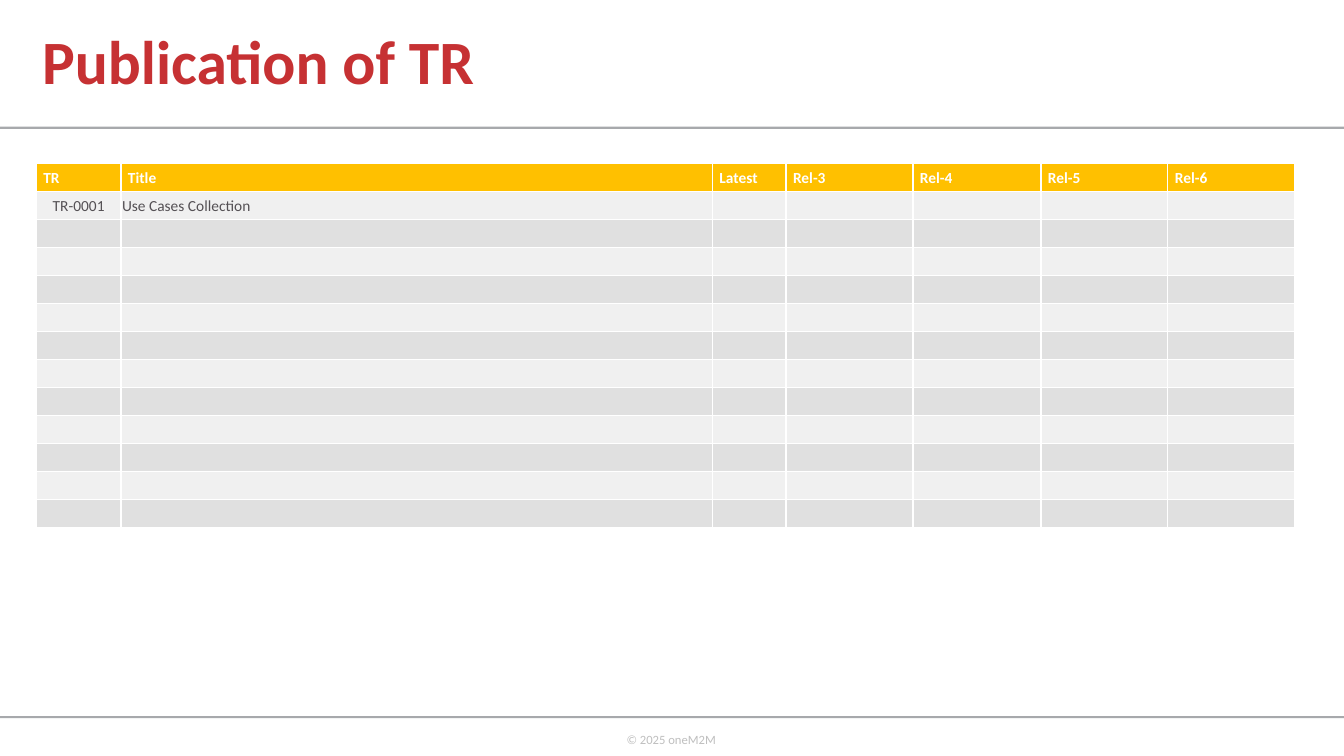
from lxml.etree import SubElement
from pptx import Presentation
from pptx.dml.color import RGBColor
from pptx.enum.shapes import MSO_SHAPE
from pptx.enum.text import MSO_ANCHOR, PP_ALIGN
from pptx.oxml.ns import qn
from pptx.util import Pt

PAGE_WIDTH, PAGE_HEIGHT = 960, 540
HEADERS = ["TR", "Title", "Latest", "Rel-3", "Rel-4", "Rel-5", "Rel-6"]
ENTRIES = [["TR-0001", "Use Cases Collection"]]
COLUMN_SHARES = [0.84, 5.87, 0.73, 1.26, 1.27, 1.26, 1.26]
BODY_ROWS = 12
FRAME_MARGINS = dict.fromkeys(["margin_left", "margin_top", "margin_right", "margin_bottom"], Pt(3.6))
HEADER_CELL = {"margin_left": Pt(5), "margin_right": Pt(5), "margin_top": 0, "margin_bottom": 0,
               "vertical_anchor": MSO_ANCHOR.MIDDLE}
BODY_CELL = {**HEADER_CELL, "margin_left": Pt(0.75), "margin_right": Pt(0.75), "margin_top": Pt(0.75)}


def color(value):
    return RGBColor.from_string(value)


def apply_format(target, values):
    for name, value in values.items():
        setattr(target, name, value)


def write(para, text, size, fill, bold=False):
    span = para.add_run()
    span.text = text
    apply_format(span.font, {"name": "Calibri", "size": Pt(size), "bold": bold})
    span.font.color.rgb = color(fill)


def add_rule(page, left, top, width):
    rule = page.shapes.add_shape(MSO_SHAPE.RECTANGLE, Pt(left), Pt(top), Pt(width), Pt(1.5))
    rule.shadow.inherit = False
    rule.fill.solid()
    rule.fill.fore_color.rgb = color("A7A9AC")
    rule.line.fill.background()


def add_heading(page, left, top, width, height):
    add_rule(page, 0, top + height - 1.5, PAGE_WIDTH)
    title = page.shapes.title
    apply_format(title, {"left": Pt(left), "top": Pt(top), "width": Pt(width), "height": Pt(height)})
    frame = title.text_frame
    apply_format(frame, {**FRAME_MARGINS, "word_wrap": True, "vertical_anchor": MSO_ANCHOR.MIDDLE})
    para = frame.paragraphs[0]
    apply_format(para, {"alignment": PP_ALIGN.LEFT, "line_spacing": 0.9})
    write(para, "Publication of TR", 44, "C63133", True)


def add_footer(page, left, top, width, height):
    add_rule(page, left, top, width)
    label_width = 74
    box = page.shapes.add_textbox(Pt(left + (width - label_width) / 2 + 1), Pt(top + 7.5),
                                  Pt(label_width), Pt(height - 10))
    apply_format(box.text_frame, {**FRAME_MARGINS, "word_wrap": False})
    write(box.text_frame.paragraphs[0], "© 2025 oneM2M", 9, "BFBFBF")


def add_borders(cell):
    properties = cell._tc.get_or_add_tcPr()
    for side in ("a:lnL", "a:lnR", "a:lnT", "a:lnB"):
        line = SubElement(properties, qn(side), w=str(Pt(1)))
        SubElement(SubElement(line, qn("a:solidFill")), qn("a:srgbClr"), val="FFFFFF")


def fill_cell(cell, text, row, column):
    header = row == 0
    add_borders(cell)
    apply_format(cell, HEADER_CELL if header else BODY_CELL)
    cell.fill.solid()
    cell.fill.fore_color.rgb = color("FFC000" if header else ("E0E0E0", "F0F0F0")[row % 2])
    para = cell.text_frame.paragraphs[0]
    if text:
        para.alignment = PP_ALIGN.LEFT if header or column else PP_ALIGN.CENTER
        write(para, text, 11, "FFFFFF" if header else "545054", header)
    else:
        SubElement(para._p, qn("a:endParaRPr"), sz="1100")


def add_register(page, left, top, width, height):
    contents = [HEADERS] + ENTRIES
    count = BODY_ROWS + 1
    table = page.shapes.add_table(count, len(HEADERS), Pt(left), Pt(top), Pt(width), Pt(height)).table
    for column, share in zip(table.columns, COLUMN_SHARES):
        column.width = Pt(width * share / sum(COLUMN_SHARES))
    for row in range(count):
        table.rows[row].height = Pt(height / count)
        texts = contents[row] if row < len(contents) else []
        for column in range(len(HEADERS)):
            text = texts[column] if column < len(texts) else ""
            fill_cell(table.cell(row, column), text, row, column)


def main():
    deck = Presentation()
    apply_format(deck, {"slide_width": Pt(PAGE_WIDTH), "slide_height": Pt(PAGE_HEIGHT)})
    page = deck.slides.add_slide(deck.slide_layouts[5])
    add_heading(page, 26.5, 0, 618.5, 92)
    add_register(page, 26, 117, 899, 260)
    add_footer(page, 0, 511.5, PAGE_WIDTH, 28)
    deck.save("out.pptx")


if __name__ == "__main__":
    main()
